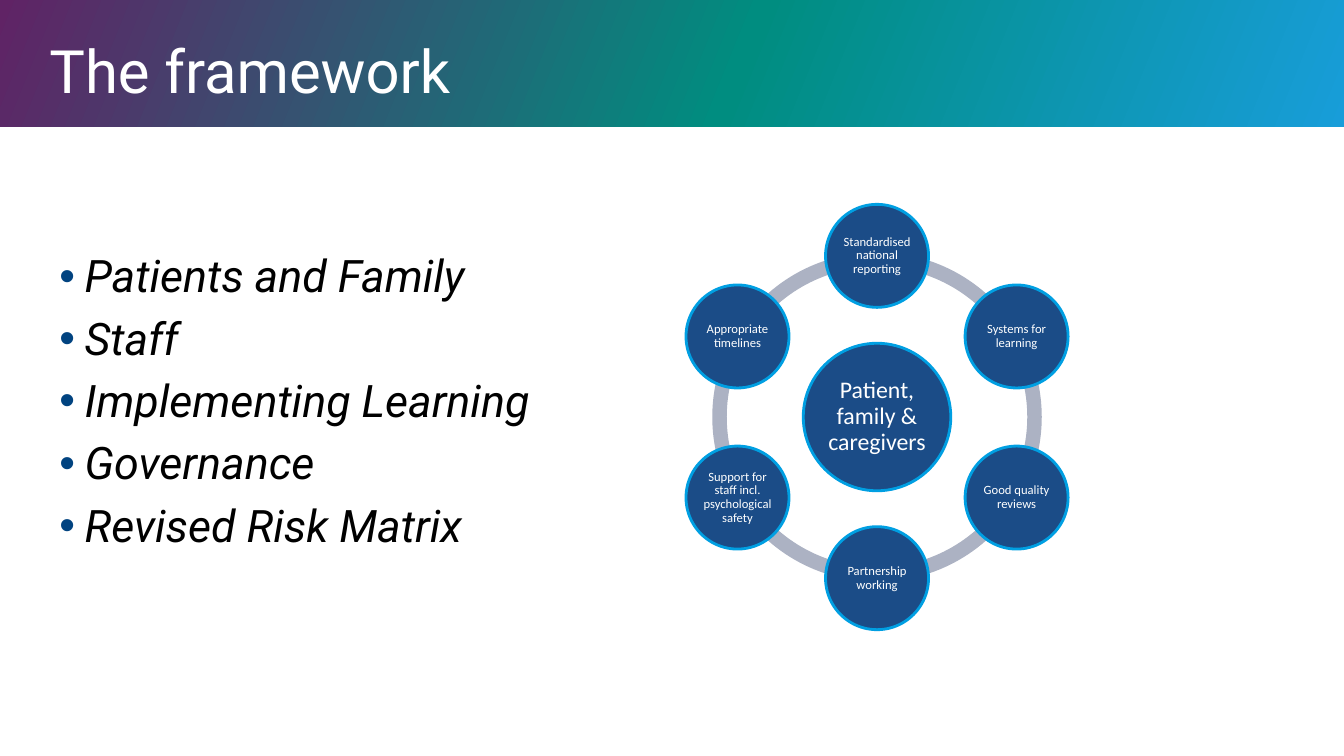
from copy import deepcopy
from math import cos, radians, sin

from lxml import etree
from pptx import Presentation
from pptx.dml.color import RGBColor
from pptx.enum.shapes import MSO_SHAPE as SHAPE
from pptx.enum.text import MSO_ANCHOR as ANCHOR, PP_ALIGN as ALIGN
from pptx.oxml.ns import qn
from pptx.util import Pt

WHITE = RGBColor(0xFF, 0xFF, 0xFF)
BLACK = RGBColor(0x00, 0x00, 0x00)
PURPLE = RGBColor(0x60, 0x23, 0x65)
TEAL = RGBColor(0x00, 0x8D, 0x80)
SKY = RGBColor(0x18, 0x9D, 0xD9)
NAVY = RGBColor(0x1B, 0x4C, 0x87)
CYAN = RGBColor(0x00, 0x9F, 0xE2)
GREY = RGBColor(0xAC, 0xB2, 0xC3)
BULLET = RGBColor(0x01, 0x43, 0x80)

THEMES = ["Patients and Family", "Staff", "Implementing Learning",
          "Governance", "Revised Risk Matrix"]
HUB = "Patient, family & caregivers"
SPOKES = ["Standardised national reporting", "Systems for learning",
          "Good quality reviews", "Partnership working",
          "Support for staff incl. psychological safety",
          "Appropriate timelines"]


def add_shape(shapes, kind, x, y, w, h):
    sp = shapes.add_shape(kind, Pt(x), Pt(y), Pt(w), Pt(h))
    sp.shadow.inherit = False
    sp.line.fill.background()
    return sp


def set_frame(tf, anchor, left, top, right, bottom):
    tf.word_wrap = True
    tf.vertical_anchor = anchor
    tf.margin_left, tf.margin_top = Pt(left), Pt(top)
    tf.margin_right, tf.margin_bottom = Pt(right), Pt(bottom)


def add_run(p, text, font, size, color, italic=False):
    p.line_spacing = 0.9
    r = p.add_run()
    r.text = text
    r.font.name = font
    r.font.size = Pt(size)
    r.font.color.rgb = color
    r.font.italic = italic


def add_bullet(p):
    pPr = p._p.get_or_add_pPr()
    pPr.set("marL", str(Pt(18)))
    pPr.set("indent", str(-Pt(18)))
    clr = etree.SubElement(pPr, qn("a:buClr"))
    etree.SubElement(clr, qn("a:srgbClr"), val=str(BULLET))
    etree.SubElement(pPr, qn("a:buFont"), typeface="Arial")
    etree.SubElement(pPr, qn("a:buChar"), char="•")


def add_header(shapes, x, y, w, h):
    band = add_shape(shapes, SHAPE.RECTANGLE, x, y, w, h)
    band.fill.gradient()
    band.fill.gradient_angle = 338
    first = band._element.spPr.find(".//" + qn("a:gs"))
    first.addnext(deepcopy(first))
    stops = zip(band.fill.gradient_stops, (0, 0.55, 1), (PURPLE, TEAL, SKY))
    for stop, position, color in stops:
        stop.position = position
        stop.color.rgb = color
    title = shapes.add_textbox(Pt(x + 35.3), Pt(y + 33.1), Pt(w - 69), Pt(39.6))
    set_frame(title.text_frame, ANCHOR.MIDDLE, 0, 0, 0, 0)
    add_run(title.text_frame.paragraphs[0], "The framework", "Roboto", 42.7, WHITE)


def add_themes(shapes, x, y, w, h):
    tf = shapes.add_textbox(Pt(x), Pt(y), Pt(w), Pt(h)).text_frame
    set_frame(tf, ANCHOR.TOP, 7.2, 48.2, 7.2, 3.6)
    for i, theme in enumerate(THEMES):
        p = tf.add_paragraph() if i else tf.paragraphs[0]
        add_run(p, theme, "Roboto", 32, BLACK, italic=True)
        p.space_before = Pt(10)
        add_bullet(p)


def add_circle(shapes, cx, cy, d, text, size, inset):
    sp = add_shape(shapes, SHAPE.OVAL, cx - d / 2, cy - d / 2, d, d)
    sp.fill.solid()
    sp.fill.fore_color.rgb = NAVY
    sp.line.color.rgb = CYAN
    sp.line.width = Pt(2)
    set_frame(sp.text_frame, ANCHOR.MIDDLE, inset, inset, inset, inset)
    p = sp.text_frame.paragraphs[0]
    p.alignment = ALIGN.CENTER
    add_run(p, text, "Calibri", size, WHITE)


def add_wheel(shapes, x, y, d):
    cx, cy = x + d / 2, y + d / 2
    step = 360 / len(SPOKES)
    angles = [step * i - 90 for i in range(len(SPOKES))]
    for angle in angles:
        arc = add_shape(shapes, SHAPE.BLOCK_ARC, x, y, d, d)
        arc.adjustments[0] = angle % 360 * 0.6
        arc.adjustments[1] = (angle + step) % 360 * 0.6
        arc.adjustments[2] = 0.044
        arc.fill.solid()
        arc.fill.fore_color.rgb = GREY
    add_circle(shapes, cx, cy, 105.4, HUB, 17, 1.7)
    orbit = d * 0.489
    for angle, text in zip(angles, SPOKES):
        a = radians(angle)
        add_circle(shapes, cx + orbit * cos(a), cy + orbit * sin(a),
                   73.6, text, 9, 0.9)


def main():
    prs = Presentation()
    prs.slide_width, prs.slide_height = Pt(960), Pt(540)
    shapes = prs.slides.add_slide(prs.slide_layouts[6]).shapes
    add_header(shapes, 0, 0, 960, 90.7)
    add_wheel(shapes, 508.8, 180.2, 235.4)
    add_themes(shapes, 35.3, 133.2, 478, 355.7)
    prs.save("out.pptx")


if __name__ == "__main__":
    main()
